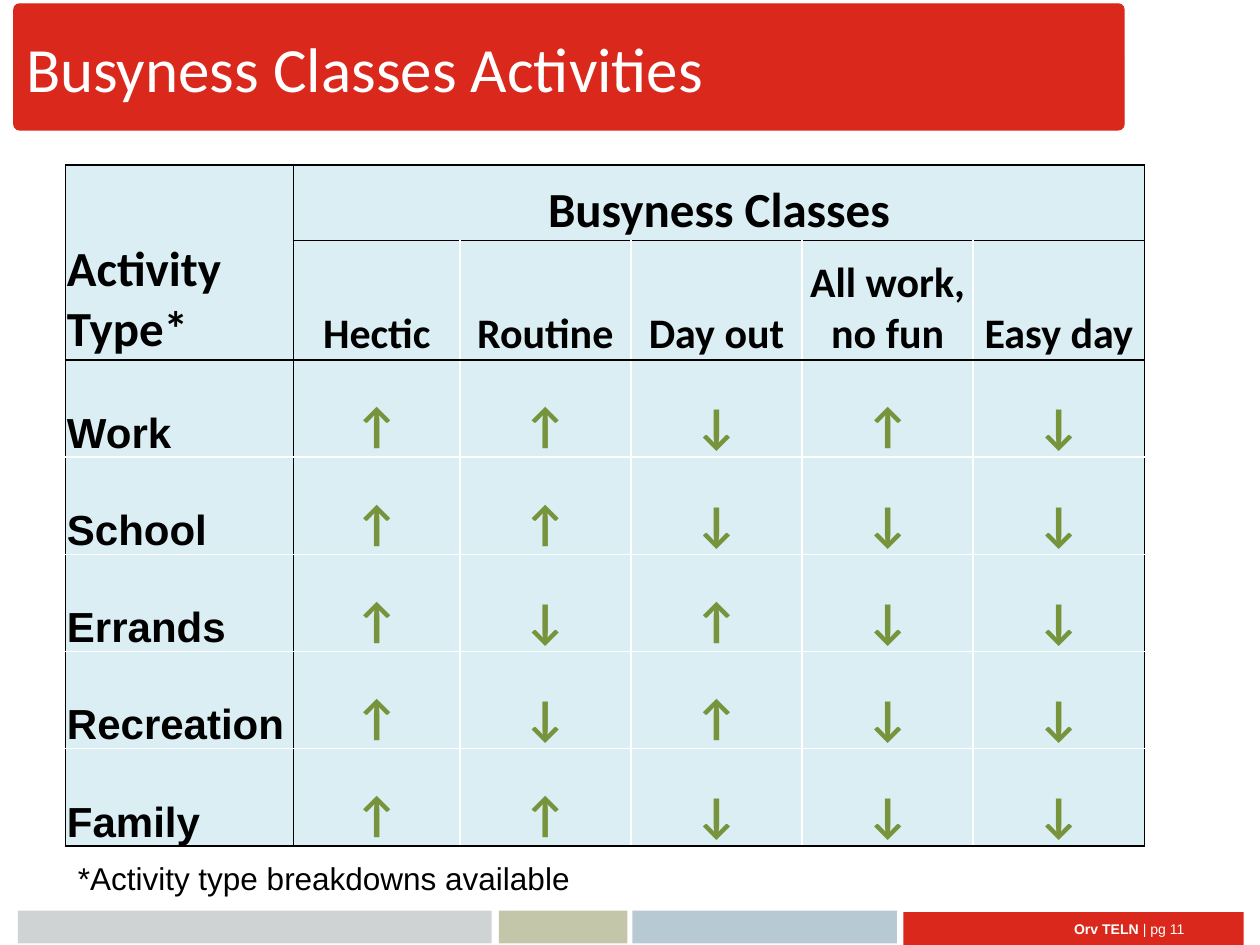
from dataclasses import dataclass

from lxml import etree
from pptx import Presentation
from pptx.dml.color import RGBColor
from pptx.enum.shapes import MSO_SHAPE
from pptx.enum.text import MSO_ANCHOR, PP_ALIGN
from pptx.oxml.ns import qn
from pptx.util import Cm, Pt


@dataclass(frozen=True)
class Theme:
    red: str = "DA291C"
    grey: str = "D0D3D4"
    olive: str = "C3C6A8"
    blue: str = "B7C9D3"
    cell: str = "DBEEF4"
    arrow: str = "77933C"
    black: str = "000000"
    white: str = "FFFFFF"
    heading_font: str = "Calibri"
    body_font: str = "Arial"
    title: int = 36
    large: int = 28
    medium: int = 24
    note: int = 18
    footer: int = 8


theme = Theme()


def style(text, size, face, color, bold=False):
    """Format a run or a whole paragraph."""
    text.font.size = Pt(size)
    text.font.name = face
    text.font.color.rgb = RGBColor.from_string(color)
    text.font.bold = bold


def add_text(left, top, width, height, text, anchor=MSO_ANCHOR.TOP):
    """Add a wrapping text box and return its paragraph."""
    frame = slide.shapes.add_textbox(Cm(left), Cm(top), Cm(width), Cm(height)).text_frame
    frame.word_wrap = True
    frame.vertical_anchor = anchor
    frame.text = text
    return frame.paragraphs[0]


prs = Presentation()
prs.slide_width, prs.slide_height = Cm(25.4), Cm(19.05)
slide = prs.slides.add_slide(prs.slide_layouts[6])

# Title bar and footer bars: left, top, width, height, corner, colour
bars = [
    (18.21, 18.39, 6.86, 0.66, 0, theme.red),
    (0.28, 0.08, 22.38, 2.54, 0.045, theme.red),
    (0.36, 18.36, 9.55, 0.66, 0, theme.grey),
    (10.06, 18.36, 2.59, 0.66, 0, theme.olive),
    (12.75, 18.36, 5.33, 0.66, 0, theme.blue),
]
for left, top, width, height, corner, color in bars:
    bar = slide.shapes.add_shape(
        MSO_SHAPE.ROUNDED_RECTANGLE, Cm(left), Cm(top), Cm(width), Cm(height))
    bar.adjustments[0] = corner
    bar.shadow.inherit = False
    bar.fill.solid()
    bar.fill.fore_color.rgb = RGBColor.from_string(color)
    if corner:
        bar.line.color.rgb = RGBColor.from_string(color)
        bar.line.width = Pt(0.75)
    else:
        bar.line.fill.background()

# Footer
footer = add_text(18.21, 18.36, 5.92, 0.74, "Orv TELN ", MSO_ANCHOR.MIDDLE)
footer.alignment = PP_ALIGN.RIGHT
footer.add_run().text = "| pg 11"
for run, bold in zip(footer.runs, (True, False)):
    style(run, theme.footer, theme.body_font, theme.white, bold)

# Activity table
rows = [
    ["Activity Type*", "Busyness Classes", "", "", "", ""],
    ["", "Hectic", "Routine", "Day out", "All work, no fun", "Easy day"],
    ["Work", *"↑↑↓↑↓"],
    ["School", *"↑↑↓↓↓"],
    ["Errands", *"↑↓↑↓↓"],
    ["Recreation", *"↑↓↑↓↓"],
    ["Family", *"↑↑↓↓↓"],
]
column_widths = [4.6, 3.35] + [3.45] * 4
row_heights = [1.52, 2.21] + [1.96] * 5
last_row, last_column = len(rows) - 1, len(column_widths) - 1

activities = slide.shapes.add_table(
    len(rows), len(column_widths), Cm(1.32), Cm(3.33),
    Cm(sum(column_widths)), Cm(sum(row_heights))).table
for column, width in zip(activities.columns, column_widths):
    column.width = Cm(width)
for row, height in zip(activities.rows, row_heights):
    row.height = Cm(height)

for r, labels in enumerate(rows):
    for c, label in enumerate(labels):
        cell = activities.cell(r, c)
        cell.margin_left = cell.margin_right = cell.margin_top = Cm(0.03)
        cell.margin_bottom = 0
        cell.vertical_anchor = MSO_ANCHOR.BOTTOM

        # Black frames the table, its header rows and its first column
        black_edges = {
            "a:lnL": r == 0 or c <= 1,
            "a:lnR": r == 0 or c in (0, last_column),
            "a:lnT": r <= 2,
            "a:lnB": r in (0, 1, last_row),
        }
        properties = cell._tc.get_or_add_tcPr()
        for edge, is_black in black_edges.items():
            line = etree.SubElement(properties, qn(edge), w=str(Pt(1)))
            fill = etree.SubElement(line, qn("a:solidFill"))
            etree.SubElement(fill, qn("a:srgbClr"),
                             val=theme.black if is_black else theme.white)
        cell.fill.solid()
        cell.fill.fore_color.rgb = RGBColor.from_string(theme.cell)

        cell.text_frame.text = label
        paragraph = cell.text_frame.paragraphs[0]
        paragraph.alignment = PP_ALIGN.CENTER if c else PP_ALIGN.LEFT
        is_arrow = r >= 2 and c >= 1
        is_activity = r >= 2 and c == 0
        for run in paragraph.runs:
            style(run,
                  theme.large if r == 0 or is_arrow else theme.medium,
                  theme.body_font if is_activity else theme.heading_font,
                  theme.arrow if is_arrow else theme.black,
                  bold=True)

activities.cell(0, 0).merge(activities.cell(1, 0))
activities.cell(0, 1).merge(activities.cell(0, last_column))

# Title and footnote
title = add_text(0.28, 0.08, 22.76, 2.57, "Busyness Classes Activities", MSO_ANCHOR.MIDDLE)
style(title.runs[0], theme.title, theme.heading_font, theme.white)
footnote = add_text(1.32, 17.2, 15.37, 1.02, "*Activity type breakdowns available")
style(footnote.runs[0], theme.note, theme.body_font, theme.black)

prs.save("out.pptx")
